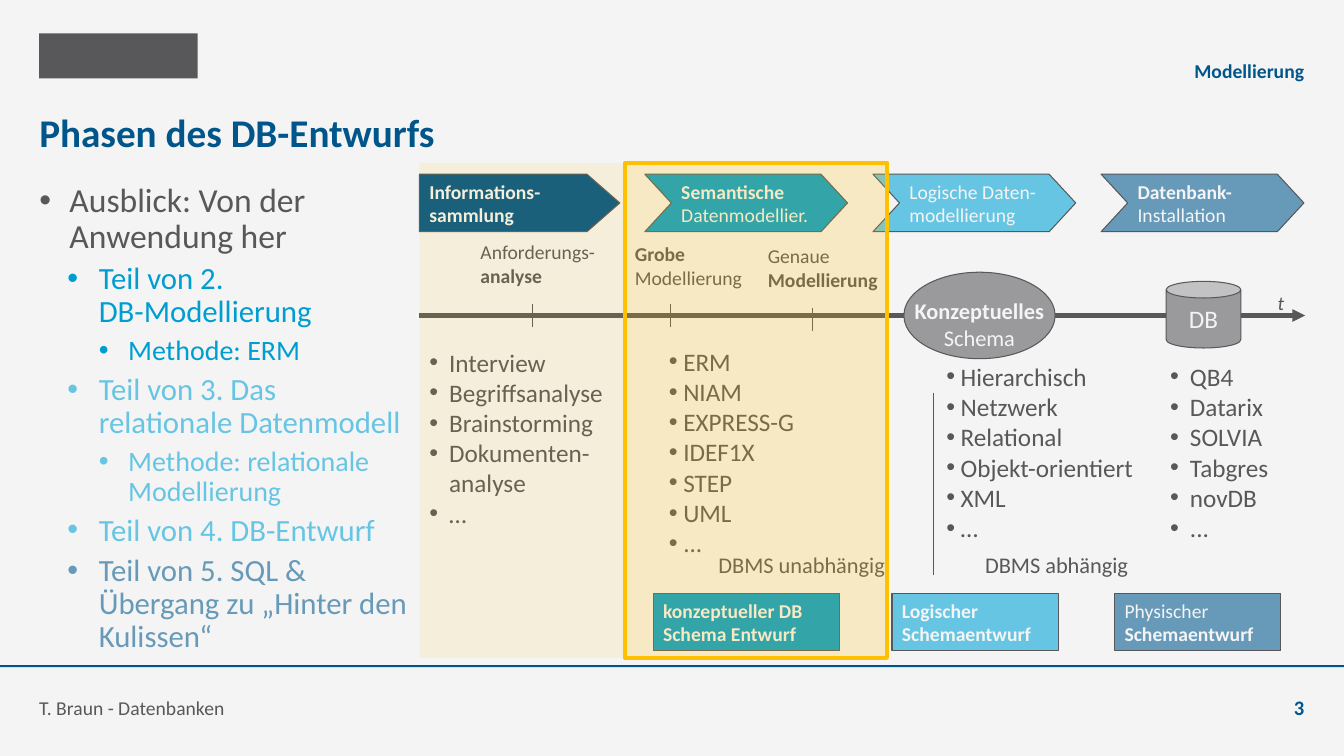
from lxml import etree
from pptx import Presentation
from pptx.dml import color
from pptx.enum import shapes, text
from pptx.oxml import ns
from pptx.util import Cm, Pt

GREY, NAVY, BLUE, SKY, STEEL = "58585A", "00568A", "009DD1", "67C5E4", "679AB9"
PALE, SILVER, AMBER = "F4F4F4", "9A9A9D", "FFC000"
FORMS = shapes.MSO_SHAPE
TOP, MIDDLE, BOTTOM = (text.MSO_ANCHOR.TOP, text.MSO_ANCHOR.MIDDLE,
                       text.MSO_ANCHOR.BOTTOM)
LEFT, CENTER, RIGHT = text.PP_ALIGN.LEFT, text.PP_ALIGN.CENTER, text.PP_ALIGN.RIGHT


def rgb(value):
    return color.RGBColor.from_string(value)


def add_node(parent, tag, **attributes):
    return etree.SubElement(parent, ns.qn(tag), attributes)


# Text
def add_spans(para, words, size, ink, bold=False, italic=False):
    for number, line in enumerate(words.split("\n")):
        if number:
            para.add_line_break()
        span = para.add_run()
        span.text = line
        font = span.font
        font.name, font.size, font.bold, font.italic = "Calibri", Pt(size), bold, italic
        font.color.rgb = rgb(ink)


def set_bullet(para, margin, hanging):
    props = para._p.get_or_add_pPr()
    props.set("marL", str(Cm(margin)))
    props.set("indent", str(-Cm(hanging)))
    add_node(props, "a:buFont", typeface="Arial")
    add_node(props, "a:buChar", char="•")


def set_frame(frame, anchor=TOP, insets=(0.25, 0.13, 0.25, 0.13), wrap=False):
    frame.auto_size = text.MSO_AUTO_SIZE.NONE
    frame.word_wrap = wrap
    frame.vertical_anchor = anchor
    (frame.margin_left, frame.margin_top,
     frame.margin_right, frame.margin_bottom) = map(Cm, insets)


def write_lines(frame, lines, size, ink, align=LEFT, italic=False, indent=0):
    """Each line is a pair of words and bold flag and becomes a paragraph."""
    for number, (words, bold) in enumerate(lines):
        para = frame.add_paragraph() if number else frame.paragraphs[0]
        para.alignment = align
        add_spans(para, words, size, ink, bold, italic)
        if indent:
            set_bullet(para, indent, indent)


def add_label(page, place, lines, size=14, **style):
    box = page.shapes.add_textbox(*map(Cm, place))
    set_frame(box.text_frame)
    write_lines(box.text_frame, lines, size, GREY, **style)


def add_margin_text(page, place, words, size, ink, align, bold):
    box = page.shapes.add_textbox(*map(Cm, place))
    set_frame(box.text_frame, BOTTOM, (0, 0, 0, 0), True)
    write_lines(box.text_frame, [(words, bold)], size, ink, align)


def add_list(page, place, items, indent):
    add_label(page, place, [(item, False) for item in items], 18, indent=indent)


# Shapes
def add_form(page, form, place, fill=None, line=None, width=0.75, alpha=None, adjust=()):
    shape = page.shapes.add_shape(form, *map(Cm, place))
    shape.shadow.inherit = False
    for number, value in enumerate(adjust):
        shape.adjustments[number] = value
    if fill:
        shape.fill.solid()
        shape.fill.fore_color.rgb = rgb(fill)
        if alpha:
            tint = shape._element.spPr.find(".//" + ns.qn("a:srgbClr"))
            add_node(tint, "a:alpha", val=str(alpha * 1000))
    else:
        shape.fill.background()
    if line:
        shape.line.color.rgb = rgb(line)
        shape.line.width = Pt(width)
    else:
        shape.line.fill.background()
    return shape


def add_caption_form(page, form, place, fill, lines, size=14, align=LEFT,
                     anchor=MIDDLE, insets=(0.25, 0.13, 0.25, 0.13), adjust=()):
    shape = add_form(page, form, place, fill, GREY, adjust=adjust)
    set_frame(shape.text_frame, anchor, insets)
    write_lines(shape.text_frame, lines, size, PALE, align)


def add_scope_arrow(page, form, place, words, align, wrap, adjust):
    shape = add_form(page, form, place, None, PALE, adjust=adjust)
    set_frame(shape.text_frame, TOP, (0.1, 0.1, 0.1, 0.1), wrap)
    write_lines(shape.text_frame, [(words, False)], 16, GREY, align)


def add_line(page, left, top, right, bottom, width=0.75, arrow=False):
    line = page.shapes.add_connector(shapes.MSO_CONNECTOR.STRAIGHT,
                                     *map(Cm, (left, top, right, bottom)))
    line.line.color.rgb = rgb(GREY)
    line.line.width = Pt(width)
    if arrow:
        add_node(line.line._get_or_add_ln(), "a:tailEnd", type="triangle")
    add_node(line._element.spPr, "a:effectLst")


# Placeholders
def move(holder, place):
    holder.left, holder.top, holder.width, holder.height = map(Cm, place)


def fill_title(page):
    title = page.shapes.title
    move(title, (0.99, 2.51, 31.88, 1.6))
    set_frame(title.text_frame, MIDDLE, (0, 0, 0, 0), True)
    write_lines(title.text_frame, [("Phasen des DB-Entwurfs", True)], 28, NAVY)


def fill_outline(page):
    body = page.placeholders[1]
    move(body, (0.99, 4.62, 9.45, 11.79))
    frame = body.text_frame
    set_frame(frame, TOP, (0, 0, 0, 0), True)
    levels = [(24, 0.76, 0.76), (22, 1.5, 0.79), (20, 2.24, 0.74)]
    entries = [
        (0, GREY, "Ausblick: Von der\nAnwendung her"),
        (1, BLUE, "Teil von 2.\nDB-Modellierung"),
        (2, BLUE, "Methode: ERM"),
        (1, SKY, "Teil von 3. Das relationale Datenmodell"),
        (2, SKY, "Methode: relationale Modellierung"),
        (1, SKY, "Teil von 4. DB-Entwurf"),
        (1, STEEL, "Teil von 5. SQL & Übergang zu „Hinter den Kulissen“"),
    ]
    for number, (level, ink, words) in enumerate(entries):
        para = frame.add_paragraph() if number else frame.paragraphs[0]
        size, margin, hanging = levels[level]
        para.level = level
        para.line_spacing, para.space_before = 0.9, Pt(5)
        add_spans(para, words, size, ink)
        set_bullet(para, margin, hanging)


# Slide sections
def add_margins(page):
    add_form(page, FORMS.RECTANGLE, (0.99, 0.84, 3.99, 1.14), GREY)
    add_form(page, FORMS.RECTANGLE, (0, 16.76, 33.87, 0.05), NAVY)
    add_margin_text(page, (9.98, 1.09, 22.89, 0.99), "Modellierung", 14, NAVY, RIGHT, True)
    add_margin_text(page, (0.99, 17.15, 23.37, 0.99), "T. Braun - Datenbanken",
                    14, GREY, LEFT, False)
    add_margin_text(page, (30.86, 17.15, 2.01, 0.99), "3", 14.7, NAVY, RIGHT, True)


def add_phases(page):
    add_caption_form(page, FORMS.PENTAGON, (10.57, 4.39, 5.05, 1.45), NAVY,
                     [("Informations-\nsammlung", True)], adjust=[0.571])
    phases = [(BLUE, ("Semantische", True), ("Datenmodellier.", False)),
              (SKY, ("Logische Daten-", False), ("modellierung", False)),
              (STEEL, ("Datenbank-", True), ("Installation", False))]
    for number, (fill, *lines) in enumerate(phases):
        add_caption_form(page, FORMS.CHEVRON, (16.25 + 5.75 * number, 4.39, 5.11, 1.45),
                         fill, lines, adjust=[0.462])


def add_timeline(page):
    add_line(page, 10.57, 7.95, 32.89, 7.95, 3, arrow=True)
    add_label(page, (31.95, 7.21, 0.69, 0.86), [("t", False)], italic=True)
    steps = [(11.86, 5.92, 13.41, 7.65, ("Anforderungs-", False), ("analyse", True)),
             (15.75, 5.97, 16.89, 7.65, ("Grobe", True), ("Modellierung", False)),
             (19.1, 6.02, 20.47, 7.75, ("Genaue", False), ("Modellierung", True))]
    for left, top, tick, tick_top, *lines in steps:
        add_label(page, (left, top, 3.35, 1.45), lines)
        add_line(page, tick, tick_top, tick, tick_top + 0.58)


def add_methods(page):
    add_list(page, (10.57, 8.61, 4.95, 4.88),
             ["Interview", "Begriffsanalyse", "Brainstorming", "Dokumenten-\nanalyse", "…"], 0.5)
    add_list(page, (16.61, 8.59, 3.78, 5.64),
             ["ERM", "NIAM", "EXPRESS-G", "IDEF1X", "STEP", "UML", "..."], 0.36)
    add_line(page, 23.52, 9.91, 23.52, 14.5)
    add_list(page, (23.6, 8.97, 5.36, 4.88),
             ["Hierarchisch", "Netzwerk", "Relational", "Objekt-orientiert", "XML", "…"], 0.36)
    add_list(page, (29.24, 8.97, 3.23, 4.88),
             ["QB4", "Datarix", "SOLVIA", "Tabgres", "novDB", "..."], 0.5)


def add_results(page):
    add_scope_arrow(page, FORMS.LEFT_ARROW, (17.22, 13.59, 5.21, 1.3),
                    "DBMS unabhängig", LEFT, False, (0.677, 0.894))
    add_scope_arrow(page, FORMS.RIGHT_ARROW, (23.75, 13.39, 5.38, 1.7),
                    "DBMS abhängig", RIGHT, True, (0.519, 0.677))
    drafts = [(16.46, 4.7, BLUE, ("konzeptueller DB", True), ("Schema Entwurf", True)),
              (22.48, 4.19, SKY, ("Logischer", True), ("Schemaentwurf", True)),
              (28.09, 4.19, STEEL, ("Physischer", False), ("Schemaentwurf", True))]
    for left, width, fill, *lines in drafts:
        add_caption_form(page, FORMS.RECTANGLE, (left, 14.95, width, 1.45), fill, lines)
    add_caption_form(page, FORMS.OVAL, (22.78, 6.86, 3.81, 2.18), SILVER,
                     [("Konzeptuelles", True), ("Schema", False)], 16, CENTER, TOP,
                     (0.25, 0.3, 0.25, 0.13))
    add_caption_form(page, FORMS.CAN, (29.39, 7.09, 1.88, 1.68), SILVER,
                     [("DB", False)], 18, CENTER, adjust=[0.25])


def add_highlights(page):
    add_form(page, FORMS.RECTANGLE, (15.75, 4.11, 6.6, 12.47), AMBER, AMBER, 3, alpha=20)
    add_form(page, FORMS.RECTANGLE, (10.57, 4.11, 5.16, 12.47), AMBER, alpha=10)


def main():
    deck = Presentation()
    deck.slide_width, deck.slide_height = Cm(33.87), Cm(19.05)
    page = deck.slides.add_slide(deck.slide_layouts[1])
    page.background.fill.solid()
    page.background.fill.fore_color.rgb = rgb(PALE)
    for build in (fill_title, fill_outline, add_margins, add_phases, add_timeline,
                  add_methods, add_results, add_highlights):
        build(page)
    deck.save("out.pptx")


if __name__ == "__main__":
    main()
